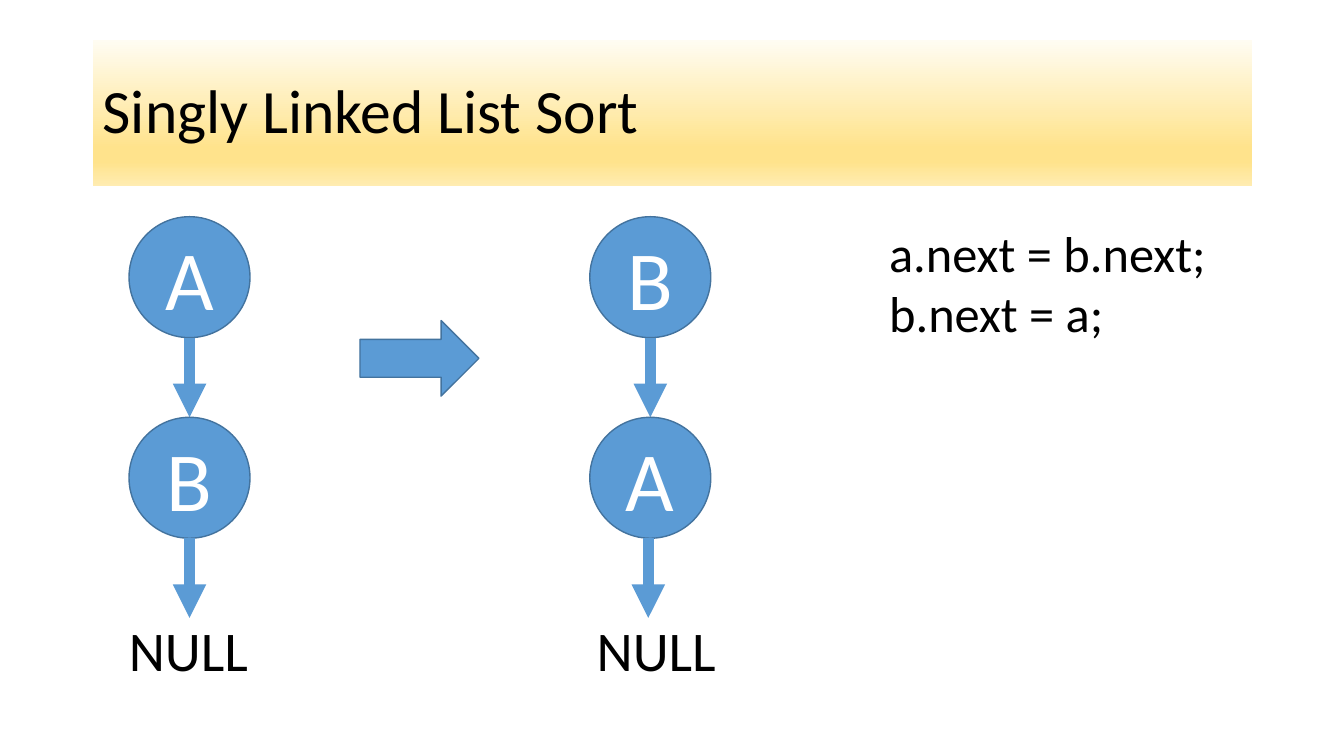
from lxml import etree
from pptx import Presentation
from pptx.dml.color import RGBColor
from pptx.enum.shapes import MSO_CONNECTOR, MSO_SHAPE
from pptx.enum.text import MSO_ANCHOR, MSO_AUTO_SIZE, PP_ALIGN
from pptx.oxml.ns import qn
from pptx.util import Inches, Pt

RECTANGLE, OVAL, RIGHT_ARROW = MSO_SHAPE.RECTANGLE, MSO_SHAPE.OVAL, MSO_SHAPE.RIGHT_ARROW
STRAIGHT = MSO_CONNECTOR.STRAIGHT
MIDDLE, TOP = MSO_ANCHOR.MIDDLE, MSO_ANCHOR.TOP
LEFT, CENTER = PP_ALIGN.LEFT, PP_ALIGN.CENTER
FIT_SHAPE = MSO_AUTO_SIZE.SHAPE_TO_FIT_TEXT

FONT = "Calibri"
BLUE, EDGE, BLACK, WHITE = "5B9BD5", "43739E", "000000", "FFFFFF"
TITLE = "Singly Linked List Sort"
TITLE_STOPS = [(0, "FFFCF2"), (74, "FFE38C"), (83, "FFE38C"), (100, "FFECB2")]
CODE = "a.next = b.next;\nb.next = a;"
END_MARK = "NULL"
# Each list: node labels, centre of the nodes, centre of the last link, left of the end mark
LISTS = [
    ("AB", 1.88, 1.88, 1.18),
    ("BA", 6.45, 6.43, 5.82),
]
FIRST_TOP, NODE_STEP, NODE_SIZE = 2.15, 1.99, 1.2

deck = Presentation()
deck.slide_width, deck.slide_height = Inches(13.33), Inches(7.5)
page = deck.slides.add_slide(deck.slide_layouts[6])


def rgb(value):
    return RGBColor.from_string(value)


def write(shape, text, size, color, align=LEFT, anchor=TOP, spacing=None):
    frame = shape.text_frame
    frame.text = text
    frame.vertical_anchor = anchor
    for para in frame.paragraphs:
        para.alignment = align
        para.line_spacing = spacing
        for span in para.runs:
            span.font.name, span.font.size = FONT, Pt(size)
            span.font.color.rgb = rgb(color)


def add_blue_shape(kind, *place):
    shape = page.shapes.add_shape(kind, *map(Inches, place))
    shape.shadow.inherit = False
    shape.fill.solid()
    shape.fill.fore_color.rgb = rgb(BLUE)
    shape.line.color.rgb = rgb(EDGE)
    shape.line.width = Pt(1)
    return shape


def add_label(text, size, *place):
    box = page.shapes.add_textbox(*map(Inches, place))
    write(box, text, size, BLACK)
    box.text_frame.word_wrap = False
    box.text_frame.auto_size = FIT_SHAPE


def add_link(x, top, bottom):
    link = page.shapes.add_connector(STRAIGHT, *map(Inches, (x, top, x, bottom)))
    link.line.color.rgb = rgb(BLUE)
    link.line.width = Pt(8)
    etree.SubElement(link.line._get_or_add_ln(), qn("a:tailEnd"), type="triangle")
    etree.SubElement(link._element.spPr, qn("a:effectLst"))


def add_title():
    band = page.shapes.add_shape(RECTANGLE, *map(Inches, (0.92, 0.4, 11.5, 1.45)))
    band.shadow.inherit = False
    band.line.fill.background()
    band.fill.gradient()
    band.fill.gradient_angle = 270
    stops = band._element.spPr.find(".//" + qn("a:gsLst"))
    for stop in list(stops):
        stops.remove(stop)
    for percent, color in TITLE_STOPS:
        stop = etree.SubElement(stops, qn("a:gs"), pos=str(percent * 1000))
        etree.SubElement(stop, qn("a:srgbClr"), val=color)
    write(band, TITLE, 44, BLACK, anchor=MIDDLE, spacing=0.9)


def add_list(labels, center, last_center, mark_left):
    for row, label in enumerate(labels):
        top = FIRST_TOP + row * NODE_STEP
        node = add_blue_shape(OVAL, center - NODE_SIZE / 2, top, NODE_SIZE, NODE_SIZE)
        write(node, label, 60, WHITE, CENTER, MIDDLE)
        x = last_center if row == len(labels) - 1 else center
        add_link(x, top + NODE_SIZE, top + NODE_STEP)
    add_label(END_MARK, 40, mark_left, 6.06, 1.4, 0.77)


add_title()
for linked_list in LISTS:
    add_list(*linked_list)
add_blue_shape(RIGHT_ARROW, 3.57, 3.18, 1.18, 0.75)
add_label(CODE, 36, 8.72, 2.15, 3.37, 1.31)
deck.save("out.pptx")
